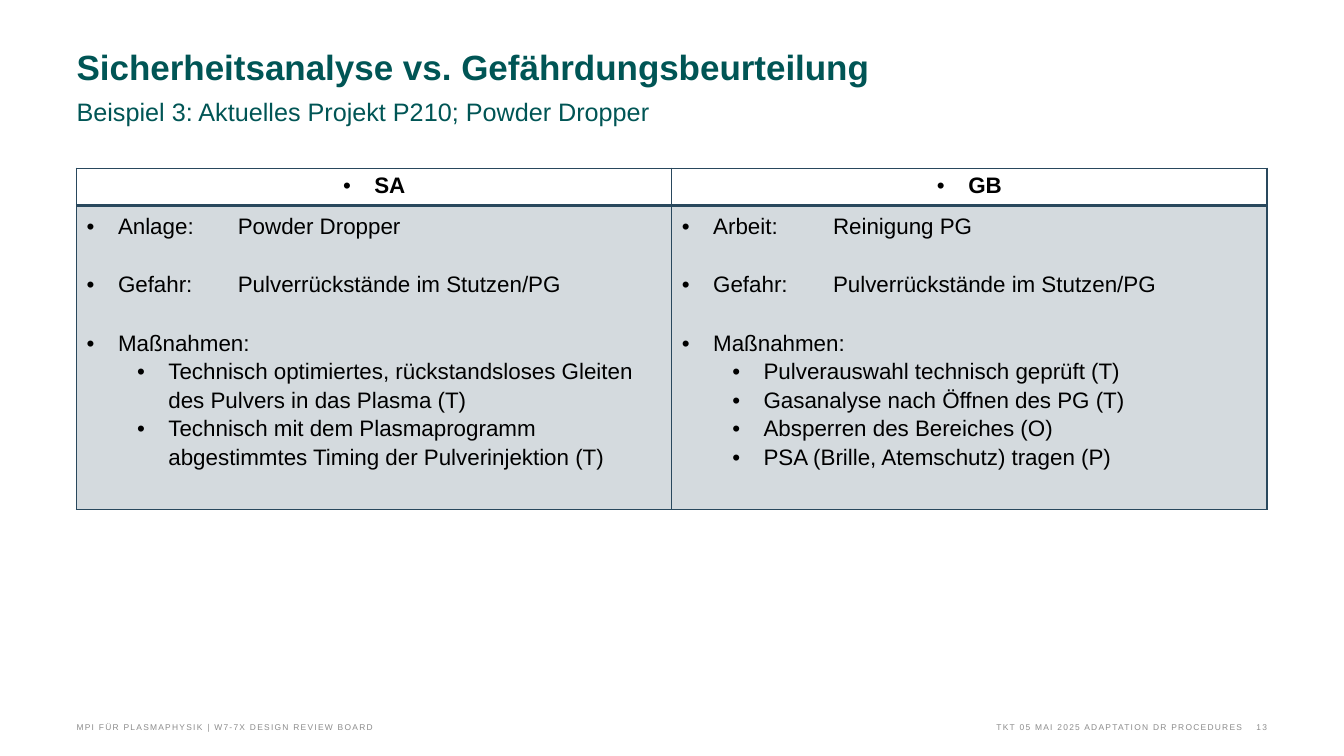
import pptx
import pptx.dml.color
import pptx.enum.text
import pptx.oxml
import pptx.oxml.ns
import pptx.util
from pptx.util import Cm

RGBColor = pptx.dml.color.RGBColor
PP_ALIGN = pptx.enum.text.PP_ALIGN
ANCHOR = pptx.enum.text.MSO_ANCHOR
TEAL = RGBColor(0x00, 0x55, 0x55)
GREY = RGBColor(0x8C, 0x8C, 0x8C)
BLACK = RGBColor(0x00, 0x00, 0x00)
NAVY = RGBColor(0x29, 0x48, 0x5D)

LEFT, WIDTH = Cm(1.93), Cm(30)
HANG = Cm(0.79)
BLOCK_GAP = 21.2

# Each body line: text, outline level, whether it opens a new block
COLUMNS = {
    "SA": [
        ("Anlage: \tPowder Dropper", 0, False),
        ("Gefahr:\tPulverrückstände im Stutzen/PG", 0, True),
        ("Maßnahmen:", 0, True),
        ("Technisch optimiertes, rückstandsloses Gleiten des Pulvers in das Plasma (T)", 1, False),
        ("Technisch mit dem Plasmaprogramm abgestimmtes Timing der Pulverinjektion (T)", 1, False),
    ],
    "GB": [
        ("Arbeit:\t\tReinigung PG", 0, False),
        ("Gefahr: \tPulverrückstände im Stutzen/PG", 0, True),
        ("Maßnahmen:", 0, True),
        ("Pulverauswahl technisch geprüft (T)", 1, False),
        ("Gasanalyse nach Öffnen des PG (T)", 1, False),
        ("Absperren des Bereiches (O)", 1, False),
        ("PSA (Brille, Atemschutz) tragen (P)", 1, False),
    ],
}


def xml(tag, parent, **attributes):
    """Append a DrawingML element to parent and return it."""
    element = pptx.oxml.parse_xml(f"<a:{tag} {pptx.oxml.ns.nsdecls('a')}/>")
    for name, value in attributes.items():
        element.set(name, str(value))
    parent.append(element)
    return element


def add_text(p, text, size=16, color=BLACK, bold=False, align=PP_ALIGN.LEFT, spacing=None):
    r = p.add_run()
    r.text = text
    r.font.name = "Arial"
    r.font.size = pptx.util.Pt(size)
    r.font.bold = bold
    r.font.color.rgb = color
    p.alignment = align
    if spacing is not None:
        r.font._element.set("spc", str(spacing))


def clear_margins(tf):
    tf.margin_left = tf.margin_right = tf.margin_top = tf.margin_bottom = 0
    tf.word_wrap = True


def add_title(s, title, subtitle):
    sp = s.shapes.title
    sp.left, sp.top, sp.width, sp.height = LEFT, Cm(1.22), Cm(26.6), Cm(2.49)
    tf = sp.text_frame
    clear_margins(tf)
    tf.auto_size = pptx.enum.text.MSO_AUTO_SIZE.NONE
    tf.vertical_anchor = ANCHOR.TOP
    p = tf.paragraphs[0]
    p.line_spacing = pptx.util.Pt(28)
    add_text(p, title, size=25, color=TEAL, bold=True)
    p.add_line_break()
    add_text(p, subtitle, size=18, color=TEAL)


def add_footer(s, text, left, width, align=PP_ALIGN.LEFT):
    tf = s.shapes.add_textbox(left, Cm(18.03), width, Cm(0.41)).text_frame
    clear_margins(tf)
    tf.vertical_anchor = ANCHOR.BOTTOM
    add_text(tf.paragraphs[0], text, size=6, color=GREY, align=align, spacing=90)


def set_bullet(p, level=0):
    p.level = level
    pPr = p._p.get_or_add_pPr()
    pPr.set("marL", str(HANG + level * Cm(1.27)))
    pPr.set("indent", str(-HANG))
    xml("buFont", pPr, typeface="Arial")
    xml("buChar", pPr, char="•")


def set_borders(cell, bottom):
    tcPr = cell._tc.get_or_add_tcPr()
    for side, points in (("L", 1), ("R", 1), ("T", 1), ("B", bottom)):
        ln = xml(f"ln{side}", tcPr, w=pptx.util.Pt(points))
        xml("srgbClr", xml("solidFill", ln), val=NAVY)


def fill_header(cell, heading):
    set_borders(cell, bottom=2)
    cell.fill.background()
    p = cell.text_frame.paragraphs[0]
    set_bullet(p)
    add_text(p, heading, bold=True, align=PP_ALIGN.CENTER)


def fill_body(cell, lines):
    set_borders(cell, bottom=1)
    cell.fill.solid()
    cell.fill.fore_color.rgb = NAVY
    tint = cell._tc.tcPr.find(pptx.oxml.ns.qn("a:solidFill"))[0]
    xml("alpha", tint, val=20000)
    tf = cell.text_frame
    for i, (text, level, new_block) in enumerate(lines):
        p = tf.add_paragraph() if i else tf.paragraphs[0]
        set_bullet(p, level)
        p.line_spacing = 1.15
        if new_block:
            p.space_before = pptx.util.Pt(BLOCK_GAP)
        add_text(p, text)


def add_comparison(s, columns):
    heights = Cm(0.94), Cm(7.65)
    table = s.shapes.add_table(2, len(columns), LEFT, Cm(4.24), WIDTH, sum(heights)).table
    table.first_row = table.horz_banding = False
    for row, height in zip(table.rows, heights):
        row.height = height
    for i, (heading, lines) in enumerate(columns.items()):
        fill_header(table.cell(0, i), heading)
        fill_body(table.cell(1, i), lines)


def main():
    prs = pptx.Presentation()
    prs.slide_width, prs.slide_height = Cm(33.87), Cm(19.05)
    s = prs.slides.add_slide(prs.slide_layouts.get_by_name("Title Only"))
    add_title(s, "Sicherheitsanalyse vs. Gefährdungsbeurteilung",
              "Beispiel 3: Aktuelles Projekt P210; Powder Dropper")
    add_comparison(s, COLUMNS)
    add_footer(s, "MPI FÜR PLASMAPHYSIK | W7-7X DESIGN REVIEW BOARD", LEFT, Cm(16.92))
    add_footer(s, "TKT 05 MAI 2025 ADAPTATION DR PROCEDURES", Cm(19.5), Cm(11.8), PP_ALIGN.RIGHT)
    add_footer(s, "13", Cm(31.02), Cm(0.91), PP_ALIGN.RIGHT)
    prs.save("out.pptx")


if __name__ == "__main__":
    main()
